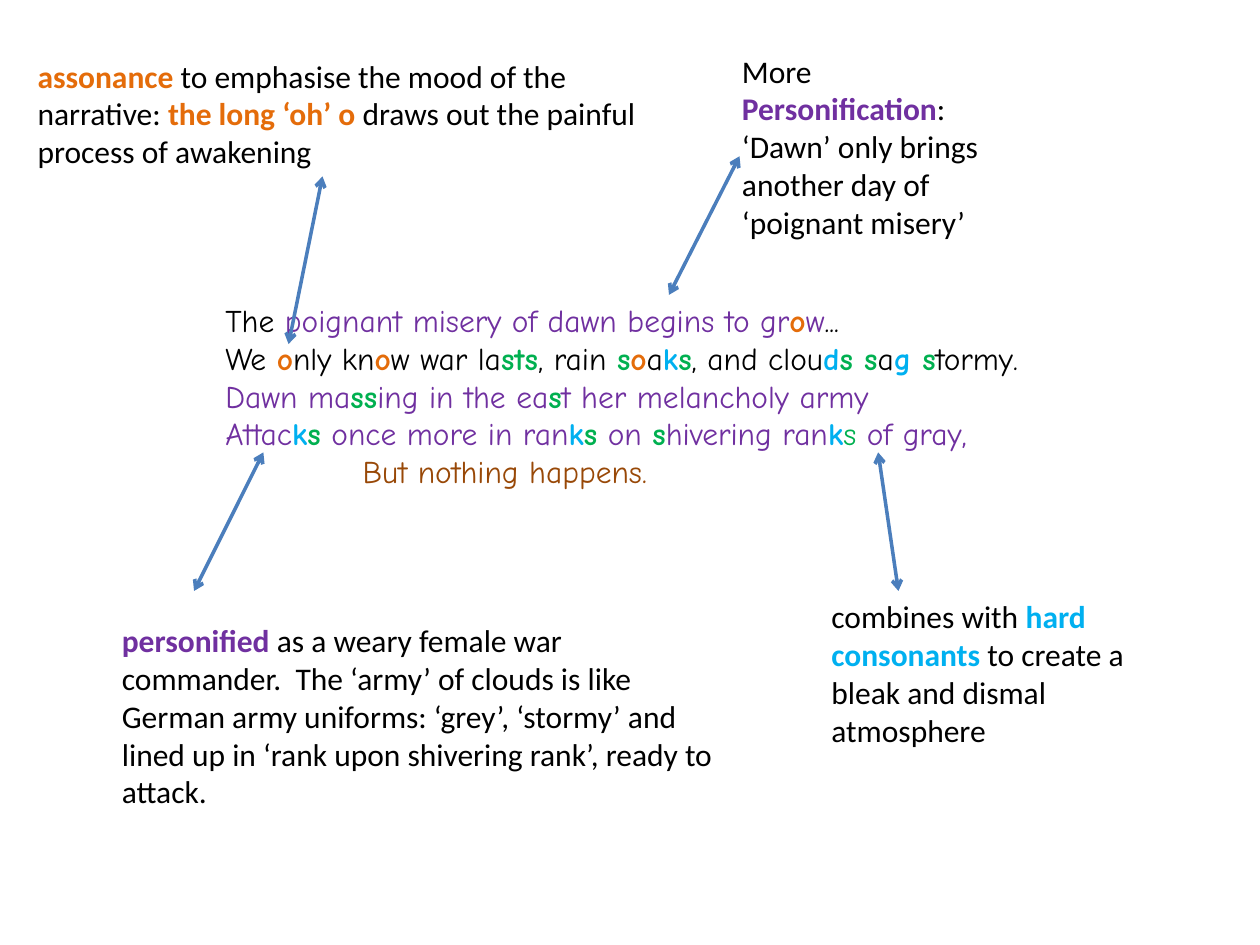
from lxml import etree
from pptx import Presentation
from pptx.dml.color import RGBColor
from pptx.enum.shapes import MSO_CONNECTOR
from pptx.enum.text import MSO_AUTO_SIZE
from pptx.oxml.ns import qn
from pptx.util import Pt

STRAIGHT = MSO_CONNECTOR.STRAIGHT
GROW = MSO_AUTO_SIZE.SHAPE_TO_FIT_TEXT
BLANK_LAYOUT = 6

# Each marking is a colour and a weight
PLAIN = ("000000", False)
IMAGERY = ("7030A0", False)
PERSONIFIED = ("7030A0", True)
ASSONANCE = ("E46C0A", True)
SIBILANT = ("00B050", True)
SIBILANT_LIGHT = ("00B050", False)
HARD = ("00B0F0", True)
REFRAIN = ("984807", False)


def rgb(value):
    return RGBColor.from_string(value)


class AnnotatedSlide:
    note_font = "Calibri"
    verse_font = "Comic Neue"
    text_size = 18
    arrow_colour = "4B7EBC"
    arrow_width = 2

    def __init__(self, slide):
        self.slide = slide

    def text(self, left, top, width, height, lines, font, last_indent=0):
        box = self.slide.shapes.add_textbox(
            Pt(left), Pt(top), Pt(width), Pt(height))
        frame = box.text_frame
        frame.word_wrap = True
        frame.auto_size = GROW
        for number, line in enumerate(lines):
            paragraph = frame.paragraphs[0] if number == 0 else frame.add_paragraph()
            for words, (colour, bold) in line:
                run = paragraph.add_run()
                run.text = words
                run.font.name = font
                run.font.size = Pt(self.text_size)
                run.font.bold = bold
                run.font.color.rgb = rgb(colour)
        if last_indent:
            paragraph._p.get_or_add_pPr().set("marL", str(Pt(last_indent)))

    def note(self, left, top, width, height, *parts):
        self.text(left, top, width, height, [parts], self.note_font)

    def verse(self, left, top, width, height, lines, last_indent):
        self.text(left, top, width, height, lines, self.verse_font, last_indent)

    def double_arrow(self, x1, y1, x2, y2):
        arrow = self.slide.shapes.add_connector(
            STRAIGHT, Pt(x1), Pt(y1), Pt(x2), Pt(y2))
        arrow.line.color.rgb = rgb(self.arrow_colour)
        arrow.line.width = Pt(self.arrow_width)
        outline = arrow.line._get_or_add_ln()
        for end in ("a:headEnd", "a:tailEnd"):
            etree.SubElement(outline, qn(end)).set("type", "arrow")
        etree.SubElement(arrow._element.spPr, qn("a:effectLst"))


STANZA = [
    [("The ", PLAIN), ("poignant misery of dawn begins to gr", IMAGERY),
     ("o", ASSONANCE), ("w", IMAGERY), ("...", PLAIN)],
    [("We ", PLAIN), ("o", ASSONANCE), ("nly kn", PLAIN), ("o", ASSONANCE),
     ("w war la", PLAIN), ("sts", SIBILANT), (", rain ", PLAIN),
     ("s", SIBILANT), ("o", ASSONANCE), ("a", PLAIN), ("k", HARD),
     ("s", SIBILANT), (", and clou", PLAIN), ("d", HARD), ("s s", SIBILANT),
     ("a", PLAIN), ("g ", HARD), ("s", SIBILANT), ("tormy.", PLAIN)],
    [("Dawn ma", IMAGERY), ("ss", SIBILANT), ("ing in the ea", IMAGERY),
     ("s", SIBILANT), ("t her melancholy army", IMAGERY)],
    [("Attac", IMAGERY), ("k", HARD), ("s", SIBILANT),
     (" once more in ran", IMAGERY), ("k", HARD), ("s", SIBILANT),
     (" on ", IMAGERY), ("s", SIBILANT), ("hivering ran", IMAGERY),
     ("k", HARD), ("s", SIBILANT_LIGHT), (" of gray,", IMAGERY)],
    [("But nothing happens.", REFRAIN)],
]


def main():
    deck = Presentation()
    deck.slide_width, deck.slide_height = Pt(720), Pt(540)
    page = AnnotatedSlide(deck.slides.add_slide(deck.slide_layouts[BLANK_LAYOUT]))

    # Stanza in the middle, its refrain indented
    page.verse(121.7, 168.5, 521.3, 116.6, STANZA, last_indent=78.5)

    # Dawn brings misery
    page.double_arrow(422.6, 89.3, 382.3, 168.5)
    page.note(416.9, 25.9, 169.9, 116.6,
              ("More ", PLAIN), ("Personification", PERSONIFIED),
              (": ‘Dawn’ only brings another day of ‘poignant misery’", PLAIN))

    # Dawn as commander
    page.double_arrow(150.5, 258.5, 110.9, 337.7)
    page.note(62.6, 351.4, 360, 116.6,
              ("personified", PERSONIFIED),
              (" as a weary female war commander.  The ‘army’ of clouds is like "
               "German army uniforms: ‘grey’, ‘stormy’ and lined up in ‘rank "
               "upon shivering rank’, ready to attack.", PLAIN))

    # Hard consonants
    page.note(468, 337.7, 212.4, 94.3,
              ("combines with ", PLAIN), ("hard consonants", HARD),
              (" to create a bleak and dismal atmosphere", PLAIN))
    page.double_arrow(501.8, 258.5, 513.4, 337.7)

    # Assonance
    page.note(14.4, 28.8, 360, 72.7,
              ("assonance ", ASSONANCE),
              ("to emphasise the mood of the narrative: ", PLAIN),
              ("the long ‘oh’ o ", ASSONANCE),
              ("draws out the painful process of awakening", PLAIN))
    page.double_arrow(184.3, 100.8, 164.9, 196.6)

    deck.save("out.pptx")


if __name__ == "__main__":
    main()
